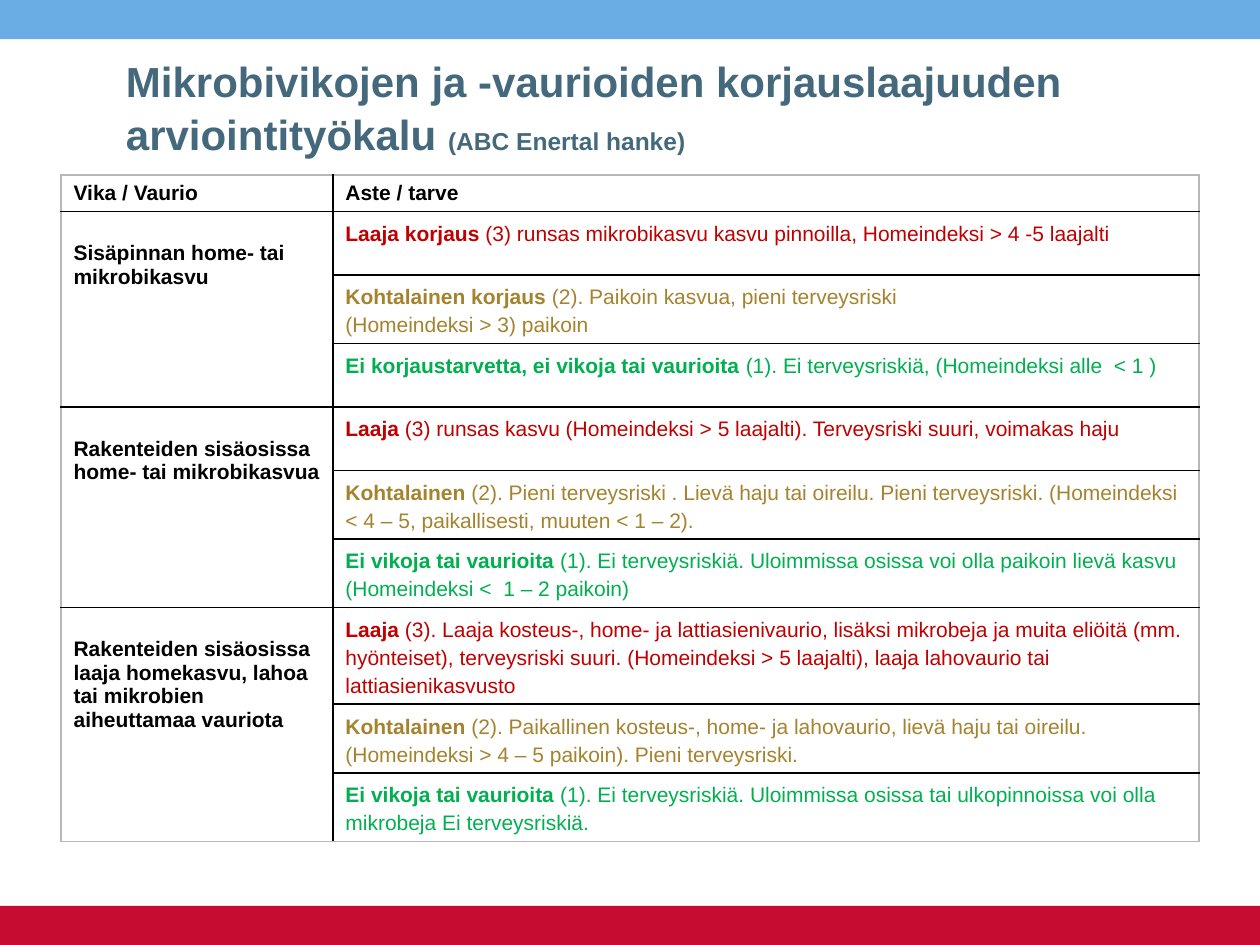
import pptx
import pptx.dml.color
import pptx.enum.shapes
import pptx.enum.text
import pptx.oxml
import pptx.oxml.ns
import pptx.util
from pptx.util import Cm, Pt

BLACK, GREY, WHITE, SLATE = "000000", "B8B8B8", "FFFFFF", "44697D"
LEVEL_COLORS = ["C00000", "A5832E", "00B050"]  # extensive, moderate, none

TITLE = [("Mikrobivikojen ja -vaurioiden korjauslaajuuden arviointityökalu ", 24),
         ("(ABC Enertal hanke)", 14)]
HEADERS = ["Vika / Vaurio", "Aste / tarve"]
# Each defect has three levels: (bold lead, explanation)
DEFECTS = [
    ("Sisäpinnan home- tai mikrobikasvu", [
        ("Laaja korjaus",
         " (3) runsas mikrobikasvu kasvu pinnoilla, Homeindeksi > 4 -5 laajalti"),
        ("Kohtalainen korjaus",
         " (2). Paikoin kasvua, pieni terveysriski\n(Homeindeksi > 3) paikoin"),
        ("Ei korjaustarvetta, ei vikoja tai vaurioita ",
         "(1). Ei terveysriskiä, (Homeindeksi alle  < 1 )")]),
    ("Rakenteiden sisäosissa home- tai mikrobikasvua", [
        ("Laaja",
         " (3) runsas kasvu (Homeindeksi > 5 laajalti). Terveysriski suuri, voimakas haju"),
        ("Kohtalainen",
         " (2). Pieni terveysriski . Lievä haju tai oireilu. Pieni terveysriski. "
         "(Homeindeksi < 4 – 5, paikallisesti, muuten < 1 – 2)."),
        ("Ei vikoja tai vaurioita ",
         "(1). Ei terveysriskiä. Uloimmissa osissa voi olla paikoin lievä kasvu "
         "(Homeindeksi <  1 – 2 paikoin)")]),
    ("Rakenteiden sisäosissa laaja homekasvu, lahoa tai mikrobien aiheuttamaa vauriota", [
        ("Laaja",
         " (3). Laaja kosteus-, home- ja lattiasienivaurio, lisäksi mikrobeja ja muita "
         "eliöitä (mm. hyönteiset), terveysriski suuri. (Homeindeksi > 5 laajalti), "
         "laaja lahovaurio tai lattiasienikasvusto"),
        ("Kohtalainen",
         " (2). Paikallinen kosteus-, home- ja lahovaurio, lievä haju tai oireilu. "
         "(Homeindeksi > 4 – 5 paikoin). Pieni terveysriski."),
        ("Ei vikoja tai vaurioita ",
         "(1). Ei terveysriskiä. Uloimmissa osissa tai ulkopinnoissa voi olla "
         "mikrobeja Ei terveysriskiä.")]),
]
COL_WIDTHS = [5.48, 17.46]
ROW_HEIGHTS = [0.72, 1.28, 1.38, 1.28, 1.28, 1.38, 1.38, 1.94, 1.38, 1.38]


def rgb(color):
    return pptx.dml.color.RGBColor.from_string(color)


def add_text(p, text, size=12, color=BLACK, bold=False):
    for i, line in enumerate(text.split("\n")):
        if i:
            p.add_line_break()
        r = p.add_run()
        r.text = line
        r.font.name = "Arial"
        r.font.size = Pt(size)
        r.font.bold = bold
        r.font.color.rgb = rgb(color)


def add_band(slide, top, height, color):
    sp = slide.shapes.add_shape(pptx.enum.shapes.MSO_SHAPE.RECTANGLE,
                                0, top, prs.slide_width, height)
    sp.shadow.inherit = False
    sp.fill.solid()
    sp.fill.fore_color.rgb = rgb(color)
    sp.line.fill.background()


def style_cell(cell, sides):
    """Set 1 pt borders from a dict of side letter to colour, then a white fill."""
    tc_pr = cell._tc.get_or_add_tcPr()
    for side, color in sides.items():
        tc_pr.append(pptx.oxml.parse_xml(
            f'<a:ln{side} {pptx.oxml.ns.nsdecls("a")} w="12700"><a:solidFill>'
            f'<a:srgbClr val="{color}"/></a:solidFill></a:ln{side}>'))
    cell.fill.solid()
    cell.fill.fore_color.rgb = rgb(WHITE)


prs = pptx.Presentation()
prs.slide_width, prs.slide_height = Cm(25.4), Cm(19.05)
slide = prs.slides.add_slide(prs.slide_layouts[6])

band_height = Cm(0.79)
add_band(slide, 0, band_height, "6AADE4")
add_band(slide, prs.slide_height - band_height, band_height, "C60C30")

n_rows, n_cols = len(ROW_HEIGHTS), len(COL_WIDTHS)
table = slide.shapes.add_table(n_rows, n_cols, Cm(1.23), Cm(3.53),
                               Cm(sum(COL_WIDTHS)), Cm(sum(ROW_HEIGHTS))).table
for col, width in zip(table.columns, COL_WIDTHS):
    col.width = Cm(width)
for row, height in zip(table.rows, ROW_HEIGHTS):
    row.height = Cm(height)

for cell, header in zip(table.rows[0].cells, HEADERS):
    add_text(cell.text_frame.paragraphs[0], header, bold=True)

top_row = 1
for defect, levels in DEFECTS:
    cell = table.cell(top_row, 0)
    cell.merge(table.cell(top_row + len(levels) - 1, 0))
    cell.margin_top = Cm(0.61)
    add_text(cell.text_frame.paragraphs[0], defect, bold=True)
    for i, ((lead, detail), color) in enumerate(zip(levels, LEVEL_COLORS)):
        p = table.cell(top_row + i, 1).text_frame.paragraphs[0]
        p.line_spacing = Pt(16)
        add_text(p, lead, color=color, bold=True)
        add_text(p, detail, color=color)
    top_row += len(levels)

for r in range(n_rows):
    for c in range(n_cols):
        cell = table.cell(r, c)
        bottom = r + (cell.span_height if cell.is_merge_origin else 1)
        style_cell(cell, {"L": GREY if c == 0 else BLACK,
                          "R": GREY if c == n_cols - 1 else BLACK,
                          "T": GREY if r == 0 else BLACK,
                          "B": GREY if bottom == n_rows else BLACK})

tf = slide.shapes.add_textbox(Cm(2.29), Cm(0.95), Cm(20.8), Cm(2.4)).text_frame
tf.word_wrap = True
tf.vertical_anchor = pptx.enum.text.MSO_ANCHOR.TOP
p = tf.paragraphs[0]
p.line_spacing = 1.05
for text, size in TITLE:
    add_text(p, text, size=size, color=SLATE, bold=True)

prs.save("out.pptx")
